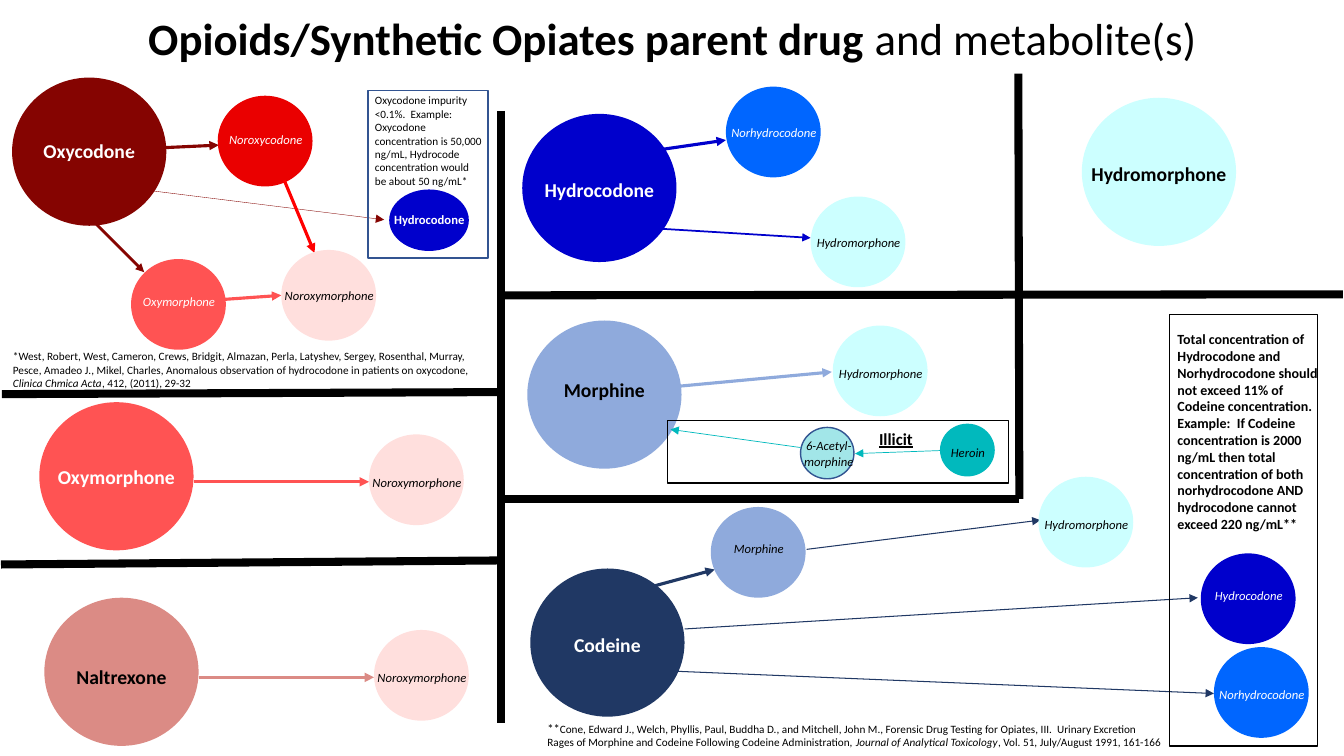
from dataclasses import dataclass

import pptx
import pptx.dml.color
import pptx.enum.shapes
import pptx.enum.text
import pptx.oxml
import pptx.oxml.ns
import pptx.util
from pptx.util import Inches

BLACK, WHITE = "000000", "FFFFFF"
OXYCODONE, NOROXYCODONE = "850401", "EA0000"
OXYMORPHONE, NOROXYMORPHONE = "FF5353", "FFDFDD"
NALTREXONE = "DB8B85"
HYDROCODONE, NORHYDROCODONE, HYDROMORPHONE = "0000CC", "0066FF", "CCFFFF"
MORPHINE, CODEINE = "8FAADC", "203864"
HEROIN, ACETYLMORPHINE = "01B9BD", "A2E6E8"
OUTLINE = "325491"

SHAPES = pptx.enum.shapes.MSO_SHAPE
CENTER = pptx.enum.text.PP_ALIGN.CENTER


def rgb(color):
    return pptx.dml.color.RGBColor.from_string(color)


@dataclass
class Region:
    """A part of the slide; every position is measured from its corner."""
    slide: object
    left: float
    top: float

    def place(self, x, y):
        return Inches(self.left + x), Inches(self.top + y)

    def outline(self, preset, x, y, width, height, fill=None, line=None):
        shape = self.slide.shapes.add_shape(
            preset, *self.place(x, y), Inches(width), Inches(height))
        shape.shadow.inherit = False
        if fill:
            shape.fill.solid()
            shape.fill.fore_color.rgb = rgb(fill)
        else:
            shape.fill.background()
        if line:
            shape.line.color.rgb = rgb(line)
            shape.line.width = pptx.util.Pt(1)
        else:
            shape.line.fill.background()

    def text(self, x, y, width, height, runs, size, color=BLACK, align=None):
        """Write runs given as (text, styles), styles being letters of 'biu'."""
        box = self.slide.shapes.add_textbox(
            *self.place(x, y), Inches(width), Inches(height))
        box.text_frame.word_wrap = True
        paragraph = box.text_frame.paragraphs[0]
        paragraph.alignment = align
        for words, styles in runs:
            run = paragraph.add_run()
            run.text = words
            run.font.name = "Calibri"
            run.font.size = pptx.util.Pt(size)
            run.font.color.rgb = rgb(color)
            run.font.bold = "b" in styles
            run.font.italic = "i" in styles
            run.font.underline = "u" in styles
        return box

    def parent(self, x, y, name, fill, color, drop=0.59):
        self.outline(SHAPES.OVAL, x, y, 1.53, 1.47, fill)
        self.text(x - 0.05, y + drop, 1.63, 0.34, [(name, "b")], 14, color, CENTER)

    def metabolite(self, x, y, name, fill, color=BLACK, drop=0.35):
        self.outline(SHAPES.OVAL, x, y, 0.94, 0.9, fill)
        self.text(x - 0.46, y + drop, 1.87, 0.4, [(name, "i")], 9, color, CENTER)

    def line(self, start, end, color, width):
        connector = self.slide.shapes.add_connector(
            pptx.enum.shapes.MSO_CONNECTOR.STRAIGHT,
            *self.place(*start), *self.place(*end))
        connector.line.color.rgb = rgb(color)
        connector.line.width = pptx.util.Pt(width)
        properties = connector.element.spPr
        properties.append(pptx.oxml.parse_xml(
            f"<a:effectLst {pptx.oxml.ns.nsdecls('a')}/>"))
        return connector

    def arrow(self, start, end, color, width=2.25):
        connector = self.line(start, end, color, width)
        connector.line._get_or_add_ln().append(pptx.oxml.parse_xml(
            f"<a:tailEnd {pptx.oxml.ns.nsdecls('a')} type='triangle'/>"))


def add_title(region):
    box = region.text(0, 0, 11.5, 0.47, [
        ("Opioids/Synthetic Opiates parent drug", "b"),
        (" and metabolite(s)", "")], 32, align=CENTER)
    box.text_frame.vertical_anchor = pptx.enum.text.MSO_ANCHOR.MIDDLE
    box.text_frame.paragraphs[0].line_spacing = 0.9


def add_dividers(region):
    for start, end in [
            ((4.97, 1.1), (4.97, 7.17)),
            ((4.97, 5.56), (0.01, 5.6)),
            ((4.96, 3.89), (0.02, 3.91)),
            ((13.32, 2.92), (5, 2.93)),
            ((10.11, 4.95), (4.97, 4.95)),
            ((10.1, 0.73), (10.11, 4.95))]:
        region.line(start, end, BLACK, 5.75)


def add_oxycodone(region):
    region.parent(0.12, 0.02, "Oxycodone", OXYCODONE, WHITE, 0.56)
    region.arrow((1.3, 0.73), (2.17, 0.69), OXYCODONE)
    region.metabolite(2.16, 0.2, "Noroxycodone", NOROXYCODONE, WHITE, 0.31)
    region.arrow((0.9, 1.42), (1.43, 1.95), OXYCODONE, 2)
    region.metabolite(1.3, 1.82, "Oxymorphone", OXYMORPHONE, WHITE, 0.3)
    region.arrow((1.48, 1.14), (3.81, 1.43), OXYCODONE, 0.25)
    region.arrow((2.23, 2.22), (2.79, 2.18), OXYMORPHONE)
    region.arrow((2.82, 1.04), (3.12, 1.76), "FF0000")
    region.metabolite(2.79, 1.73, "Noroxymorphone", NOROXYMORPHONE, drop=0.33)

    region.outline(SHAPES.OVAL, 3.86, 1.13, 0.79, 0.61, HYDROCODONE)
    region.text(3.81, 1.3, 0.92, 0.25, [("Hydrocodone", "b")], 9, WHITE)
    region.outline(SHAPES.RECTANGLE, 3.65, 0.15, 1.19, 1.66, line=OUTLINE)
    region.text(3.62, 0.13, 1.27, 1.04, [(
        "Oxycodone impurity <0.1%.  Example: Oxycodone concentration is 50,000 "
        "ng/mL, Hydrocode concentration would be about 50 ng/mL*", "")], 8)
    region.text(0.03, 2.67, 4.98, 0.5, [
        ("*West, Robert, West, Cameron, Crews, Bridgit, Almazan, Perla, Latyshev, "
         "Sergey, Rosenthal, Murray, Pesce, Amadeo J., Mikel, Charles, Anomalous "
         "observation of hydrocodone in patients on oxycodone, ", ""),
        ("Clinica Chmica Acta", "i"), (", 412, (2011), 29-32", "")], 8)


def add_noroxymorphone_source(region, name, fill, color, drop):
    """Show a parent drug whose only metabolite is noroxymorphone."""
    region.parent(0, 0, name, fill, color, drop)
    region.arrow((1.53, 0.79), (3.27, 0.79), fill)
    region.metabolite(3.27, 0.32, "Noroxymorphone", NOROXYMORPHONE)


def add_hydrocodone(region):
    region.parent(0.18, 0.38, "Hydrocodone", HYDROCODONE, WHITE)
    region.arrow((1.58, 0.73), (2.2, 0.64), HYDROCODONE)
    region.metabolite(2.2, 0.11, "Norhydrocodone", NORHYDROCODONE, WHITE, 0.33)
    region.metabolite(3.04, 1.2, "Hydromorphone", HYDROMORPHONE, drop=0.33)
    region.arrow((1.56, 1.52), (3.04, 1.61), HYDROCODONE, 1.25)


def add_hydromorphone(region):
    region.parent(0.58, 0.22, "Hydromorphone", HYDROMORPHONE, BLACK)


def add_morphine(region):
    region.parent(0.23, 0.18, "Morphine", MORPHINE, BLACK, 0.52)
    region.arrow((1.75, 0.83), (3.25, 0.69), MORPHINE)
    region.metabolite(3.26, 0.23, "Hydromorphone", HYDROMORPHONE)

    region.outline(SHAPES.RECTANGLE, 1.62, 1.17, 3.38, 0.62, line=BLACK)
    region.text(3.62, 1.2, 0.56, 0.3, [("Illicit", "bu")], 12)
    region.outline(SHAPES.OVAL, 2.94, 1.24, 0.53, 0.51, ACETYLMORPHINE, OUTLINE)
    region.text(2.75, 1.3, 0.94, 0.56, [("6-Acetyl-morphine", "i")], 9, align=CENTER)
    region.outline(SHAPES.OVAL, 4.33, 1.21, 0.53, 0.51, HEROIN, HEROIN)
    region.text(4.31, 1.36, 0.58, 0.4, [("Heroin", "i")], 9, align=CENTER)
    region.arrow((4.33, 1.47), (3.48, 1.5), HEROIN, 0.5)
    region.arrow((2.94, 1.44), (1.65, 1.26), HEROIN, 0.5)


def add_codeine(region):
    region.parent(0.26, 2.64, "Codeine", CODEINE, WHITE)
    region.arrow((1.5, 2.81), (2.09, 2.65), CODEINE)
    region.metabolite(2.05, 2.03, "Morphine", MORPHINE, drop=0.29)
    region.arrow((3, 2.45), (5.32, 2.16), CODEINE, 0.75)
    region.metabolite(5.3, 1.73, "Hydromorphone", HYDROMORPHONE)
    region.arrow((1.79, 3.24), (6.88, 2.93), CODEINE, 0.75)
    region.metabolite(6.91, 2.49, "Hydrocodone", HYDROCODONE, WHITE, 0.29)
    region.arrow((1.72, 3.66), (7.04, 3.88), CODEINE, 0.75)
    region.metabolite(7.04, 3.42, "Norhydrocodone", NORHYDROCODONE, WHITE)

    region.outline(SHAPES.RECTANGLE, 6.6, 0.12, 1.47, 4.28, line=BLACK)
    region.text(6.58, 0.23, 1.59, 2.29, [(
        "Total concentration of Hydrocodone and Norhydrocodone should not exceed "
        "11% of Codeine concentration. Example:  If Codeine concentration is 2000 "
        "ng/mL then total concentration of both norhydrocodone AND hydrocodone "
        "cannot exceed 220 ng/mL**", "b")], 10)
    citation = region.text(0.33, 4.1, 6.31, 0.39, [
        ("**", ""),
        ("Cone, Edward J., Welch, Phyllis, Paul, Buddha D., and Mitchell, John M., "
         "Forensic Drug Testing for Opiates, III.  Urinary Excretion Rages of "
         "Morphine and Codeine Following Codeine Administration, ", ""),
        ("Journal of Analytical Toxicology", "i"),
        (", Vol. 51, July/August 1991, 161-166", "")], 8)
    citation.text_frame.paragraphs[0].runs[0].font.size = pptx.util.Pt(9)


def main():
    presentation = pptx.Presentation()
    presentation.slide_width = Inches(13.33)
    presentation.slide_height = Inches(7.5)
    slide = presentation.slides.add_slide(presentation.slide_layouts[6])
    add_title(Region(slide, 0.92, 0.17))
    add_dividers(Region(slide, 0, 0))
    add_oxycodone(Region(slide, 0, 0.75))
    add_noroxymorphone_source(
        Region(slide, 0.39, 3.99), "Oxymorphone", OXYMORPHONE, WHITE, 0.57)
    add_noroxymorphone_source(
        Region(slide, 0.44, 5.93), "Naltrexone", NALTREXONE, BLACK, 0.62)
    add_hydrocodone(Region(slide, 5, 0.75))
    add_hydromorphone(Region(slide, 10.15, 0.75))
    add_morphine(Region(slide, 5, 3))
    add_codeine(Region(slide, 5, 3))
    presentation.save("out.pptx")


if __name__ == "__main__":
    main()
